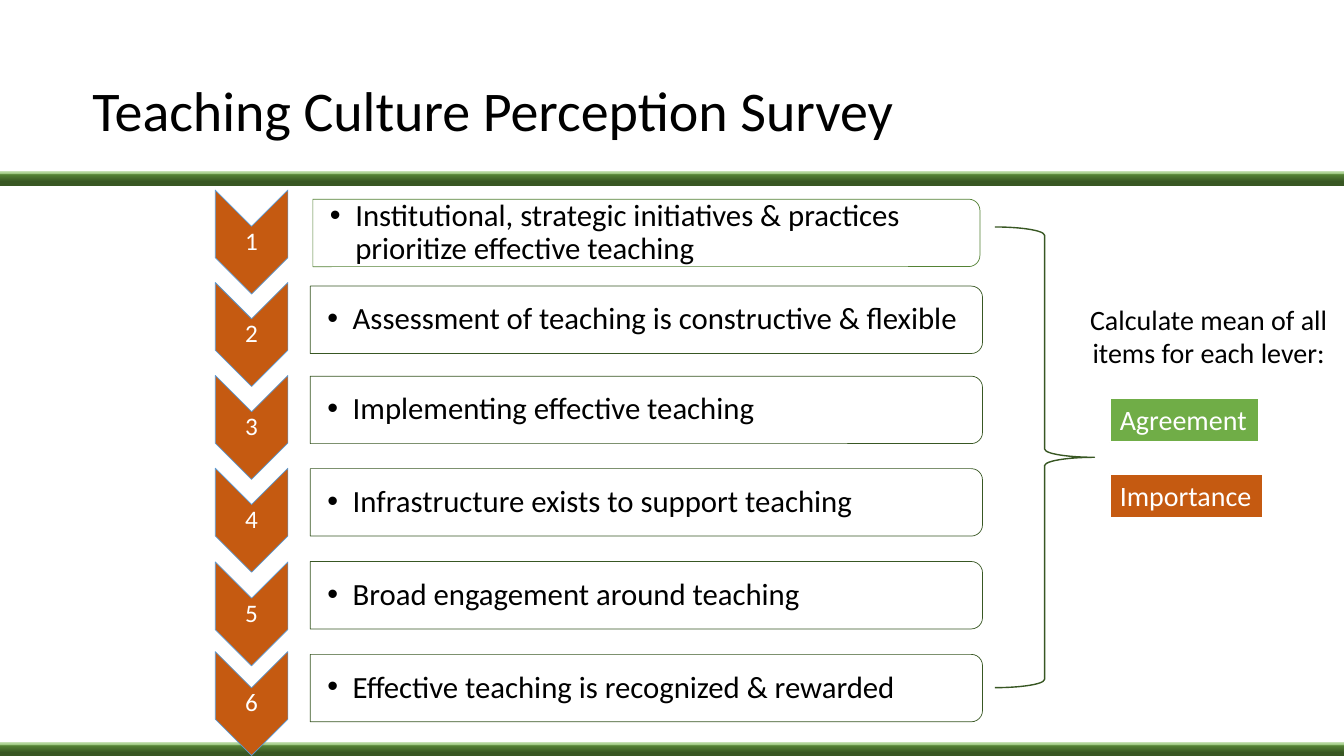
from lxml.etree import SubElement
from pptx import Presentation
from pptx.dml.color import RGBColor
from pptx.enum.shapes import MSO_SHAPE
from pptx.enum.text import MSO_ANCHOR, MSO_AUTO_SIZE, PP_ALIGN
from pptx.oxml import parse_xml
from pptx.oxml.ns import nsdecls, qn
from pptx.util import Cm, Pt

BLACK, WHITE = "000000", "FFFFFF"
DARK_GREEN, MID_GREEN, LIME = "385723", "548235", "70AD47"
ORANGE, BLUE = "C55A11", "5B9BD5"
BAR_STOPS = [(30, DARK_GREEN), (74, MID_GREEN), (83, "A9D18E"), (100, "C5E0B4")]

# Lever, centre of its chevron, centre of its box, box length, box outline
LEVERS = [
    ("Institutional, strategic initiatives & practices prioritize effective teaching",
     6.10, 5.87, 16.81, MID_GREEN),
    ("Assessment of teaching is constructive & flexible", 8.43, 8.06, 16.94, DARK_GREEN),
    ("Implementing effective teaching", 10.77, 10.33, 16.94, DARK_GREEN),
    ("Infrastructure exists to support teaching", 13.11, 12.66, 16.94, DARK_GREEN),
    ("Broad engagement around teaching", 15.47, 15.00, 16.94, DARK_GREEN),
    ("Effective teaching is recognized & rewarded", 17.73, 17.34, 16.94, DARK_GREEN),
]
CHEVRON_X, BOX_X = 6.34, 16.29
BOX_HEIGHT = 1.70


def color(value):
    return RGBColor.from_string(value)


class SlideBuilder:
    font = "Calibri"

    def __init__(self, slide):
        self.slide = slide

    def shape(self, kind, left, top, width, height, fill=None, line=None, weight=0.5):
        shape = self.slide.shapes.add_shape(kind, Cm(left), Cm(top), Cm(width), Cm(height))
        shape.shadow.inherit = False
        if fill:
            shape.fill.solid()
            shape.fill.fore_color.rgb = color(fill)
        else:
            shape.fill.background()
        if line:
            shape.line.color.rgb = color(line)
            shape.line.width = Pt(weight)
        else:
            shape.line.fill.background()
        return shape

    def turned(self, kind, center_x, center_y, width, height, fill, line):
        """A shape turned a quarter clockwise around its centre."""
        shape = self.shape(kind, center_x - width / 2, center_y - height / 2,
                           width, height, fill, line)
        shape.rotation = 90
        return shape

    def bar(self, top):
        """A full-width band with a vertical green gradient."""
        shape = self.shape(MSO_SHAPE.RECTANGLE, 0, top, 33.87, 0.4)
        stops = "".join(f'<a:gs pos="{position * 1000}"><a:srgbClr val="{value}"/></a:gs>'
                        for position, value in BAR_STOPS)
        gradient = parse_xml(f'<a:gradFill {nsdecls("a")} rotWithShape="1"><a:gsLst>{stops}'
                             '</a:gsLst><a:lin ang="16200000" scaled="0"/></a:gradFill>')
        properties = shape._element.spPr
        properties.replace(properties.find(qn("a:noFill")), gradient)

    def fill_text(self, shape, text, size, font_color, align=PP_ALIGN.LEFT,
                  anchor=MSO_ANCHOR.TOP, spacing=None, insets=None, wrap=True):
        frame = shape.text_frame
        frame.word_wrap = wrap
        frame.vertical_anchor = anchor
        if insets:
            frame.margin_left, frame.margin_top, frame.margin_right, frame.margin_bottom = (
                Cm(inset) for inset in insets)
        paragraph = frame.paragraphs[0]
        paragraph.alignment = align
        if spacing:
            paragraph.line_spacing = spacing
        run = paragraph.add_run()
        run.text = text
        run.font.name = self.font
        run.font.size = Pt(size)
        run.font.color.rgb = color(font_color)
        return paragraph

    def text(self, left, top, width, height, text, size, font_color, **style):
        box = self.slide.shapes.add_textbox(Cm(left), Cm(top), Cm(width), Cm(height))
        return self.fill_text(box, text, size, font_color,
                              anchor=MSO_ANCHOR.MIDDLE, spacing=0.9, **style)

    def bullet(self, paragraph):
        properties = paragraph._p.get_or_add_pPr()
        properties.set("marL", str(Cm(0.64)))
        properties.set("indent", str(-Cm(0.64)))
        SubElement(properties, qn("a:buFont")).set("typeface", "Arial")
        SubElement(properties, qn("a:buChar")).set("char", "•")

    def lever(self, number, text, chevron_y, box_y, length, outline):
        """A numbered chevron with the lever's box beside it."""
        self.turned(MSO_SHAPE.CHEVRON, CHEVRON_X, chevron_y, 2.62, 1.83, ORANGE, BLUE)
        self.text(CHEVRON_X - 0.92, chevron_y - 0.4, 1.84, 0.8, str(number), 18, WHITE,
                  align=PP_ALIGN.CENTER, insets=(0.03,) * 4)
        box = self.turned(MSO_SHAPE.ROUND_2_SAME_RECTANGLE, BOX_X, box_y,
                          BOX_HEIGHT, length, WHITE, outline)
        fill = box._element.spPr.find(qn("a:solidFill"))
        SubElement(fill[0], qn("a:alpha")).set("val", "90000")
        self.bullet(self.text(BOX_X - length / 2, box_y - 0.76, length - 0.08, 1.52,
                              text, 22, BLACK, insets=(0.43, 0.05, 0.05, 0.05)))

    def label(self, left, top, width, height, text, fill, font_color=WHITE,
              line=None, align=PP_ALIGN.LEFT, wrap=True):
        shape = self.shape(MSO_SHAPE.RECTANGLE, left, top, width, height, fill, line, 1.5)
        self.fill_text(shape, text, 20, font_color, align, wrap=wrap)
        shape.text_frame.auto_size = MSO_AUTO_SIZE.SHAPE_TO_FIT_TEXT


def main():
    presentation = Presentation()
    presentation.slide_width, presentation.slide_height = Cm(33.87), Cm(19.05)
    builder = SlideBuilder(presentation.slides.add_slide(presentation.slide_layouts[6]))

    # Green bands and title
    for top in (4.3, 18.69):
        builder.bar(top)
    builder.text(2.08, 1.02, 22.99, 3.68, "Teaching Culture Perception Survey", 40, BLACK)

    # Six levers
    for number, lever in enumerate(LEVERS, 1):
        builder.lever(number, *lever)

    # Brace and the two means
    builder.shape(MSO_SHAPE.RIGHT_BRACE, 25.07, 5.72, 2.51, 11.61, line=DARK_GREEN, weight=1)
    builder.label(27.97, 10.03, 3.76, 1.11, "Agreement", LIME, line=WHITE, wrap=False)
    builder.label(27.97, 11.94, 3.86, 1.11, "Importance", ORANGE, line=WHITE, wrap=False)
    builder.label(27.03, 7.49, 6.86, 1.96, "Calculate mean of all items for each lever:",
                  WHITE, BLACK, align=PP_ALIGN.CENTER)

    presentation.save("out.pptx")


if __name__ == "__main__":
    main()
